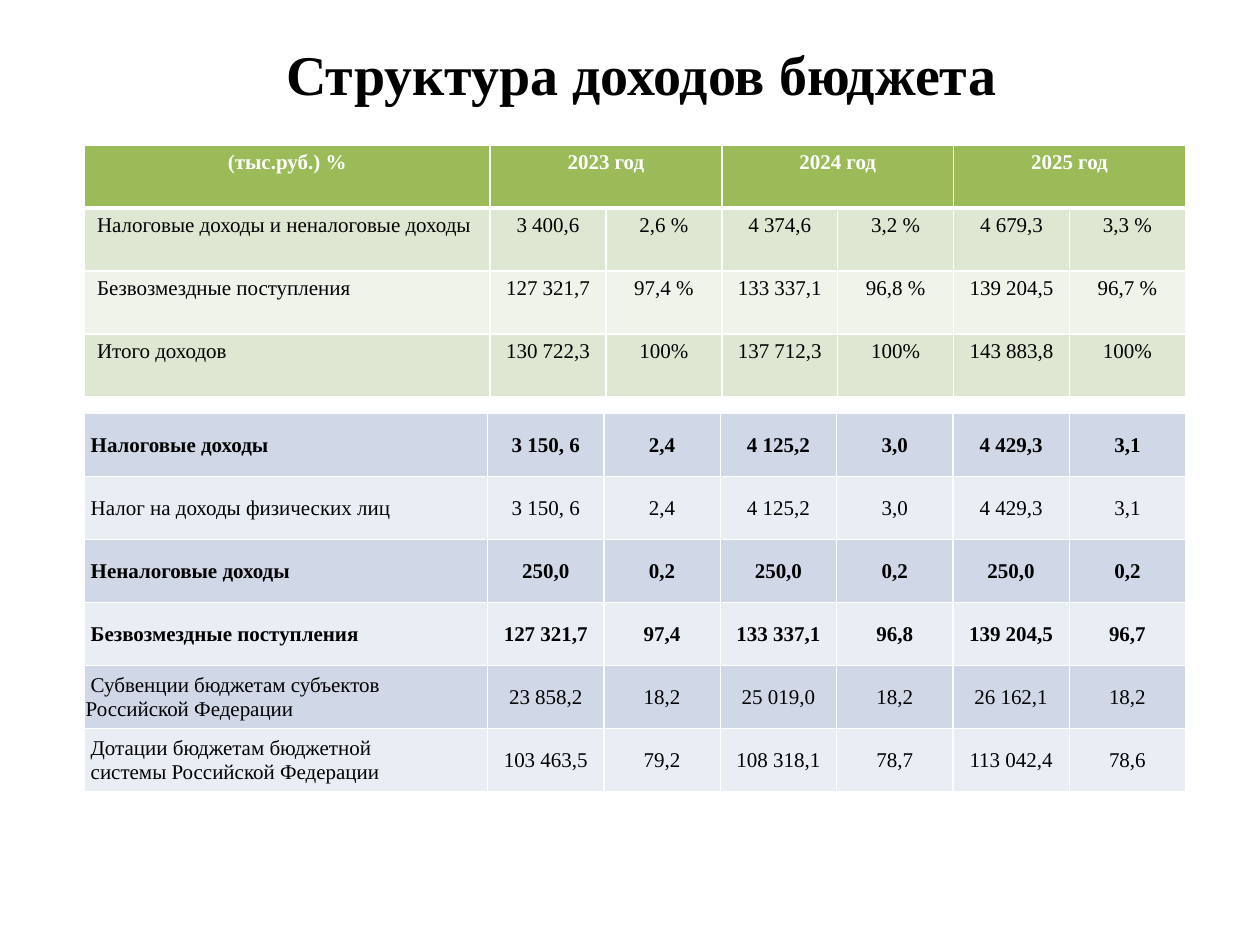
"""Build a slide with two tables on the structure of budget revenues."""
from dataclasses import dataclass

from lxml import etree
from pptx import Presentation
from pptx.dml.color import RGBColor
from pptx.enum.text import MSO_ANCHOR, PP_ALIGN
from pptx.oxml.ns import qn
from pptx.util import Inches, Pt

LEFT, CENTER = PP_ALIGN.LEFT, PP_ALIGN.CENTER
TOP, MIDDLE = MSO_ANCHOR.TOP, MSO_ANCHOR.MIDDLE


@dataclass(frozen=True)
class Theme:
    font: str = "Times New Roman"
    title_size: int = 32
    table_size: int = 12
    black: str = "000000"
    white: str = "FFFFFF"
    header: str = "9BBB59"
    green_bands: tuple = ("EFF3EA", "DEE7D1")
    blue_bands: tuple = ("D0D8E8", "E9EDF4")


THEME = Theme()
TABLE_LEFT, TABLE_WIDTH, ROW_HEIGHT = 0.67, 8.74, 0.5


def add_grid(slide, top, label_width, rows):
    height = ROW_HEIGHT * len(rows)
    table = slide.shapes.add_table(
        len(rows), 7, Inches(TABLE_LEFT), Inches(top), Inches(TABLE_WIDTH), Inches(height)
    ).table
    value_width = (TABLE_WIDTH - label_width) / 6
    for i, column in enumerate(table.columns):
        column.width = Inches(value_width if i else label_width)
    for row in table.rows:
        row.height = Inches(ROW_HEIGHT)
    return table


def style_cell(cell, text, fill, color, bold, align, bottom=1):
    cell.text = text
    for p in cell.text_frame.paragraphs:
        p.alignment = align
        p.font.name = THEME.font
        p.font.size = Pt(THEME.table_size)
        p.font.bold = bold
        p.font.color.rgb = RGBColor.from_string(color)
    tc_pr = cell._tc.get_or_add_tcPr()
    for side, width in (("L", 1), ("R", 1), ("T", 1), ("B", bottom)):
        line = etree.SubElement(tc_pr, qn(f"a:ln{side}"), w=str(Pt(width)))
        solid = etree.SubElement(line, qn("a:solidFill"))
        etree.SubElement(solid, qn("a:srgbClr"), val=THEME.white)
    cell.fill.solid()
    cell.fill.fore_color.rgb = RGBColor.from_string(fill)


prs = Presentation()
prs.slide_width, prs.slide_height = Inches(10), Inches(7.5)
s = prs.slides.add_slide(prs.slide_layouts[5])

title = s.shapes.title
title.left, title.top = Inches(0.59), Inches(0.29)
title.width, title.height = Inches(9), Inches(1.25)
tf = title.text_frame
tf.text = "Структура доходов бюджета"
tf.vertical_anchor = TOP
tf.margin_top = Inches(0.02)
p = tf.paragraphs[0]
p.alignment = CENTER
p.font.name = THEME.font
p.font.size = Pt(THEME.title_size)
p.font.bold = True
p.font.color.rgb = RGBColor.from_string(THEME.black)

summary = [
    ("(тыс.руб.) %", "2023 год", "", "2024 год", "", "2025 год", ""),
    ("Налоговые доходы и неналоговые доходы",
     "3 400,6", "2,6 %", "4 374,6", "3,2 %", "4 679,3", "3,3 %"),
    ("Безвозмездные поступления",
     "127 321,7", "97,4 %", "133 337,1", "96,8 %", "139 204,5", "96,7 %"),
    ("Итого доходов", "130 722,3", "100%", "137 712,3", "100%", "143 883,8", "100%"),
]
table = add_grid(s, 1.15, 3.22, summary)
for i, row in enumerate(summary):
    for j, text in enumerate(row):
        cell = table.cell(i, j)
        if i == 0:
            style_cell(cell, text, THEME.header, THEME.white, True, CENTER, bottom=3)
        else:
            align = CENTER if j else LEFT
            style_cell(cell, text, THEME.green_bands[i % 2], THEME.black, False, align)
for j in (1, 3, 5):
    table.cell(0, j).merge(table.cell(0, j + 1))

details = [
    (True, "Налоговые доходы", "3 150, 6", "2,4", "4 125,2", "3,0", "4 429,3", "3,1"),
    (False, "Налог на доходы физических лиц",
     "3 150, 6", "2,4", "4 125,2", "3,0", "4 429,3", "3,1"),
    (True, "Неналоговые доходы", "250,0", "0,2", "250,0", "0,2", "250,0", "0,2"),
    (True, "Безвозмездные поступления",
     "127 321,7", "97,4", "133 337,1", "96,8", "139 204,5", "96,7"),
    (False, "Субвенции бюджетам субъектов\vРоссийской Федерации",
     "23 858,2", "18,2", "25 019,0", "18,2", "26 162,1", "18,2"),
    (False, "Дотации бюджетам бюджетной\nсистемы Российской Федерации",
     "103 463,5", "79,2", "108 318,1", "78,7", "113 042,4", "78,6"),
]
table = add_grid(s, 3.28, 3.2, details)
table.first_row = False
for i, (bold, *row) in enumerate(details):
    for j, text in enumerate(row):
        cell = table.cell(i, j)
        align = CENTER if j else LEFT
        style_cell(cell, text, THEME.blue_bands[i % 2], THEME.black, bold, align)
        cell.vertical_anchor = MIDDLE
        cell.margin_left = cell.margin_right = cell.margin_top = Inches(0.01)
        cell.margin_bottom = 0
    for p in table.cell(i, 0).text_frame.paragraphs:
        p._p.get_or_add_pPr().set("indent", str(Inches(0.04)))

prs.save("out.pptx")
